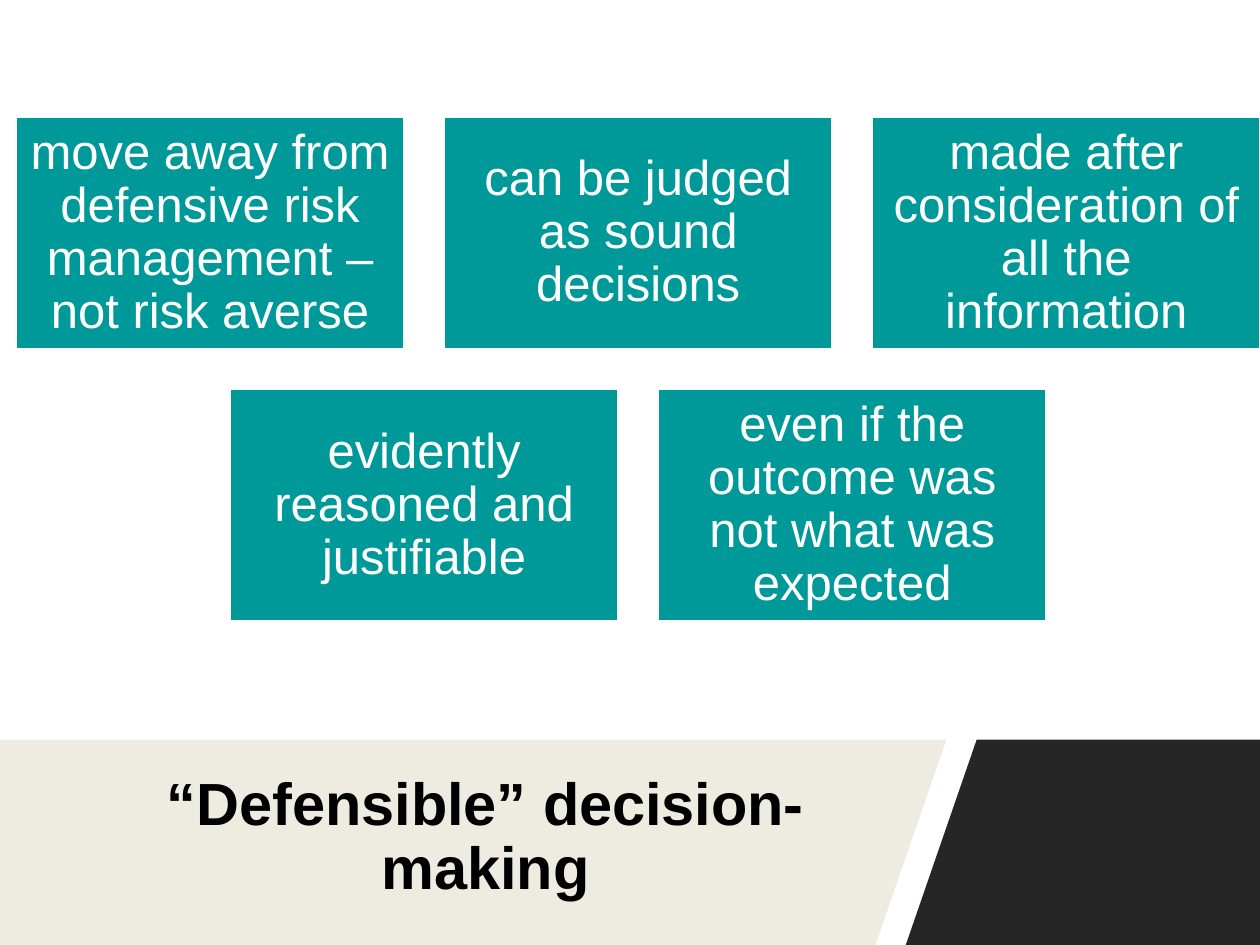
from dataclasses import dataclass

from pptx import Presentation
from pptx.dml.color import RGBColor
from pptx.enum import text as t
from pptx.enum.shapes import MSO_SHAPE
from pptx.util import Cm, Pt

WIDE, HIGH = 25.4, 19.05
BAND_TOP = 14.91
BOX_W, BOX_H, GAP = 7.85, 4.71, 0.78
LEFT, TOP = 0.31, 2.34


@dataclass
class Row:
    shift: float  # indent in column steps
    texts: list[str]


@dataclass
class Band:
    color: str
    points: list[tuple[float, float]]


ROWS = [
    Row(0, [
        "move away from defensive risk management – not risk averse",
        "can be judged as sound decisions",
        "made after consideration of all the information",
    ]),
    Row(0.5, [
        "evidently reasoned and justifiable",
        "even if the outcome was not what was expected",
    ]),
]
BANDS = [
    Band("262626", [(19.69, BAND_TOP), (WIDE, BAND_TOP), (WIDE, HIGH), (18.26, HIGH)]),
    Band("EEECE1", [(0, BAND_TOP), (19.08, BAND_TOP), (17.65, HIGH), (0, HIGH)]),
]


def rgb(code: str) -> RGBColor:
    return RGBColor.from_string(code)


def paint(shape, color: str) -> None:
    shape.shadow.inherit = False
    shape.fill.solid()
    shape.fill.fore_color.rgb = rgb(color)


def write(shape, words: str, *, size: float, color: str, bold: bool = False,
          pad: tuple[float, float] = (0.25, 0.13)) -> None:
    frame = shape.text_frame
    frame.word_wrap = True
    frame.auto_size = t.MSO_AUTO_SIZE.NONE
    frame.vertical_anchor = t.MSO_ANCHOR.MIDDLE
    frame.margin_left = frame.margin_right = Cm(pad[0])
    frame.margin_top = frame.margin_bottom = Cm(pad[1])
    para = frame.paragraphs[0]
    para.alignment = t.PP_ALIGN.CENTER
    para.line_spacing = 0.9
    run = para.add_run()
    run.text = words
    run.font.name = "Arial"
    run.font.size = Pt(size)
    run.font.bold = bold
    run.font.color.rgb = rgb(color)


def draw_band(slide, band: Band) -> None:
    first, *rest = [(Cm(x), Cm(y)) for x, y in band.points]
    form = slide.shapes.build_freeform(*first)
    form.add_line_segments(rest, close=True)
    shape = form.convert_to_shape()
    paint(shape, band.color)
    shape.line.fill.background()


def draw_box(slide, x: float, y: float, words: str) -> None:
    box = slide.shapes.add_shape(
        MSO_SHAPE.RECTANGLE, Cm(x), Cm(y), Cm(BOX_W), Cm(BOX_H))
    paint(box, "009999")
    box.line.color.rgb = rgb("FFFFFF")
    box.line.width = Pt(2)
    write(box, words, size=28, color="FFFFFF", pad=(0.3, 0.3))


def main() -> None:
    deck = Presentation()
    deck.slide_width, deck.slide_height = Cm(WIDE), Cm(HIGH)
    slide = deck.slides.add_slide(deck.slide_layouts[5])

    # Bottom bands
    for band in BANDS:
        draw_band(slide, band)

    # Title, brought in front of the bands
    title = slide.shapes.title
    title.left, title.top = Cm(1.75), Cm(15.37)
    title.width, title.height = Cm(16.08), Cm(3.05)
    write(title, "“Defensible” decision-making", size=34, color="000000", bold=True)
    title.element.getparent().append(title.element)

    # Boxes, the second row centred under the first
    for r, row in enumerate(ROWS):
        for c, words in enumerate(row.texts):
            x = LEFT + (c + row.shift) * (BOX_W + GAP)
            draw_box(slide, x, TOP + r * (BOX_H + GAP), words)

    deck.save("out.pptx")


if __name__ == "__main__":
    main()
